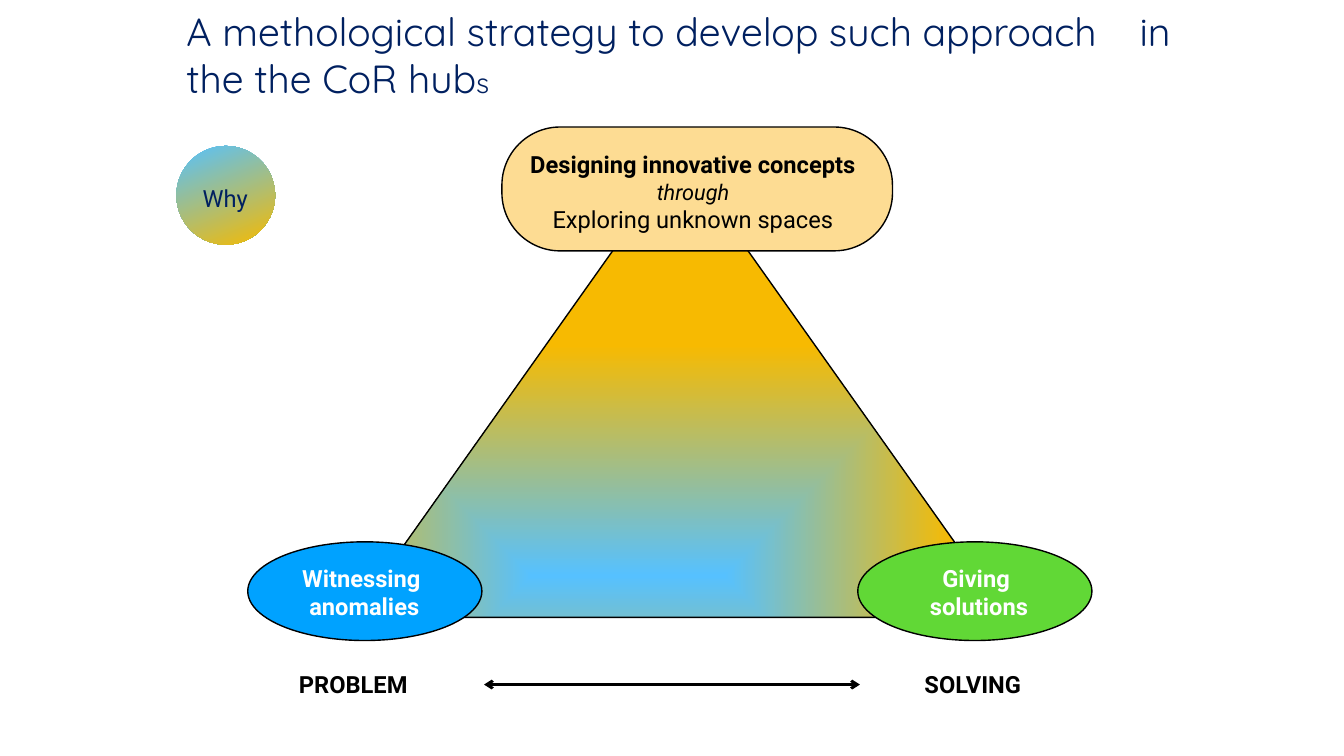
from lxml import etree
from pptx import Presentation
from pptx import util as u
from pptx.dml.color import RGBColor
from pptx.enum import shapes, text
from pptx.oxml.ns import qn

PX = 9525  # EMU in one px, 96 px to the inch
NAVY, BLACK, WHITE = "002060", "000000", "FFFFFF"
BLUE, GOLD = "56C1FF", "F7BA01"
TEXT_SIZE = 16.9


def px(*lengths):
    return [u.Emu(length * PX) for length in lengths]


def color(hex_string):
    return RGBColor.from_string(hex_string)


def add_run(paragraph, words, size=TEXT_SIZE, font="Roboto", fill=BLACK,
            bold=False, italic=False, spacing=0):
    """Add formatted words; spacing is extra space per letter in points."""
    run = paragraph.add_run()
    run.text = words
    run.font.size = u.Pt(size)
    run.font.name = font
    run.font.color.rgb = color(fill)
    run.font.bold = bold
    run.font.italic = italic
    if spacing:
        run.font._element.set("spc", str(spacing * 100))


def add_label(parent, box, lines, wrap=False):
    """Add a centred text box; each line is (words, format)."""
    frame = parent.shapes.add_textbox(*px(*box)).text_frame
    frame.word_wrap = wrap
    frame.vertical_anchor = text.MSO_ANCHOR.MIDDLE
    frame.margin_left = frame.margin_right = px(4)[0]
    frame.margin_top = frame.margin_bottom = px(4)[0]
    for index, (words, style) in enumerate(lines):
        paragraph = frame.add_paragraph() if index else frame.paragraphs[0]
        paragraph.alignment = text.PP_ALIGN.CENTER
        for part, piece in enumerate(words.split("\n")):
            if part:
                paragraph.add_line_break()
            add_run(paragraph, piece, **style)


def outline(shape):
    shape.line.color.rgb = color(BLACK)
    shape.line.width = u.Pt(1)


def fill_gradient(shape):
    shape.fill.gradient()
    for stop, position, hex_string in zip(shape.fill.gradient_stops, (0, 1), (BLUE, GOLD)):
        stop.position = position
        stop.color.rgb = color(hex_string)


def add_node(slide, kind, box, fill, label_box, lines, wrap=False):
    """Group an outlined shape with its label."""
    group = slide.shapes.add_group_shape()
    shape = group.shapes.add_shape(kind, *px(*box))
    shape.shadow.inherit = False
    shape.fill.solid()
    shape.fill.fore_color.rgb = color(fill)
    outline(shape)
    if kind == shapes.MSO_SHAPE.ROUNDED_RECTANGLE:
        shape.adjustments[0] = 0.47
    add_label(group, label_box, lines, wrap)


def add_title(slide):
    title = slide.shapes.title
    title.left, title.top, title.width, title.height = px(168, 2, 963, 134)
    frame = title.text_frame
    frame.word_wrap = True
    frame.auto_size = text.MSO_AUTO_SIZE.NONE
    frame.vertical_anchor = text.MSO_ANCHOR.TOP
    paragraph = frame.paragraphs[0]
    paragraph.alignment = text.PP_ALIGN.LEFT
    style = {"size": 28, "font": "Quicksand", "fill": NAVY}
    add_run(paragraph, "A methological strategy to develop such approach", **style)
    add_run(paragraph, " ", spacing=23, **style)
    add_run(paragraph, "in the the CoR hub", **style)
    add_run(paragraph, "s", **{**style, "size": 20})


def add_why_badge(slide):
    group = slide.shapes.add_group_shape()
    circle = group.shapes.add_shape(shapes.MSO_SHAPE.OVAL, *px(168, 139, 94, 94))
    circle.shadow.inherit = False
    fill_gradient(circle)
    circle.fill.gradient_angle = 360 - 68
    circle.line.fill.background()
    add_label(group, (188, 171, 53, 35), [("Why", {"fill": NAVY})])


def add_triangle(slide):
    builder = slide.shapes.build_freeform(*px(648, 148), scale=1.0)
    builder.add_line_segments([px(960, 588), px(336, 588)], close=True)
    triangle = builder.convert_to_shape()
    triangle.shadow.inherit = False
    fill_gradient(triangle)
    outline(triangle)
    gradient = triangle._element.spPr.find(qn("a:gradFill"))
    linear = gradient.find(qn("a:lin"))
    focus = etree.Element(qn("a:path"), path="shape")
    etree.SubElement(focus, qn("a:fillToRect"), l="42000", t="91000", r="58000", b="9000")
    gradient.replace(linear, focus)


def add_double_arrow(parent, start, end):
    arrow = parent.shapes.add_connector(shapes.MSO_CONNECTOR.STRAIGHT, *px(*start, *end))
    arrow.line.color.rgb = color(BLACK)
    arrow.line.width = u.Pt(2)
    properties = arrow._element.spPr
    for tag in ("a:headEnd", "a:tailEnd"):
        etree.SubElement(properties.find(qn("a:ln")), qn(tag), type="arrow")
    etree.SubElement(properties, qn("a:effectLst"))


def add_axis(slide):
    group = slide.shapes.add_group_shape()
    add_label(group, (276, 634, 121, 35), [("PROBLEM", {"bold": True})])
    add_label(group, (872, 634, 109, 35), [("SOLVING", {"bold": True})])
    add_double_arrow(group, (461, 652), (819, 652))


def main():
    presentation = Presentation()
    presentation.slide_width, presentation.slide_height = px(1280, 720)
    slide = presentation.slides.add_slide(presentation.slide_layouts.get_by_name("Title Only"))

    add_title(slide)
    add_why_badge(slide)
    add_triangle(slide)
    white_bold = {"fill": WHITE, "bold": True}
    oval = shapes.MSO_SHAPE.OVAL
    add_node(slide, oval, (236, 516, 223, 94), "00A2FF",
             (280, 533, 134, 62), [("Witnessing \nanomalies", white_bold)])
    add_node(slide, oval, (817, 516, 223, 94), "61D836",
             (878, 533, 109, 62), [("Giving \nsolutions", white_bold)])
    add_node(slide, shapes.MSO_SHAPE.ROUNDED_RECTANGLE, (478, 121, 372, 118), "FDDC93",
             (490, 132, 340, 101),
             [("Designing innovative concepts", {"bold": True}),
              ("through", {"size": 15.5, "italic": True}),
              ("Exploring unknown spaces", {})], wrap=True)
    add_axis(slide)
    presentation.save("out.pptx")


if __name__ == "__main__":
    main()
